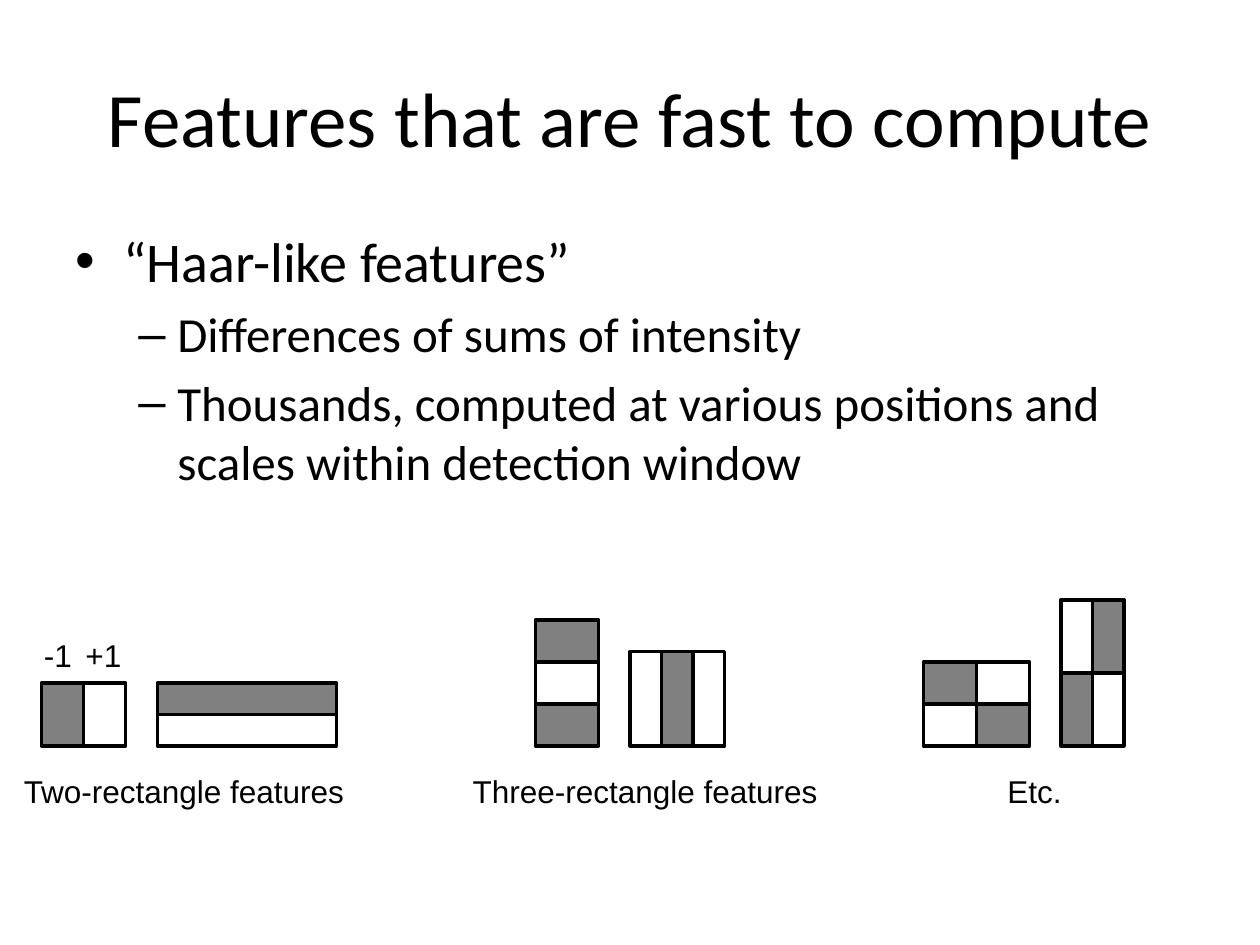
"""Build a slide on fast Haar-like image features."""
from pptx import Presentation
from pptx.dml.color import RGBColor
from pptx.enum.shapes import MSO_SHAPE as Shape
from pptx.enum.text import MSO_ANCHOR as Anchor, PP_ALIGN as Align
from pptx.oxml.xmlchemy import OxmlElement
from pptx.util import Inches, Pt

TITLE = "Features that are fast to compute"
POINTS = [
    (0, "“Haar-like features”"),
    (1, "Differences of sums of intensity"),
    (1, "Thousands, computed at various positions and scales within detection window"),
]
LEVELS = [("•", 32, 0.38, 0.38), ("–", 28, 0.81, 0.31)]
BASE = 5.92
GRIDS = [
    (0.33, 1 / 3, 0.5, ["#."]),
    (1.25, 1.42, 0.25, ["#", "."]),
    (4.25, 0.5, 1 / 3, ["#", ".", "#"]),
    (5, 0.25, 0.75, [".#."]),
    (7.33, 0.42, 1 / 3, ["#.", ".#"]),
    (8.42, 0.25, 0.58, [".#", "#."]),
]
FILLS = {"#": "808080", ".": "FFFFFF"}
CAPTIONS = [
    (0, 2.92, "Two-rectangle features"),
    (3.58, 3.08, "Three-rectangle features"),
    (6.75, 2.92, "Etc."),
]
SIGNS = [(0.25, 0.43, "-1"), (0.58, 0.49, "+1")]


def color(code):
    return RGBColor.from_string(code)


def style(para, size, face, align=Align.LEFT):
    font = para.font
    font.size, font.name = Pt(size), face
    font.color.rgb = color("000000")
    para.alignment = align


def box(slide, *area):
    frame = slide.shapes.add_textbox(*map(Inches, area)).text_frame
    frame.word_wrap = True
    return frame


def label(slide, left, top, width, text, align, wrap):
    frame = box(slide, left, top, width, 0.4)
    frame.word_wrap = wrap
    frame.text = text
    style(frame.paragraphs[0], 18, "Arial", align)


def bullet(para, level):
    mark, size, left, hang = LEVELS[level]
    para.level = level
    style(para, size, "Calibri")
    para.space_before = Pt(size * 0.2)
    props = para._p.get_or_add_pPr()
    props.set("marL", str(Inches(left)))
    props.set("indent", str(-Inches(hang)))
    for tag, key, value in [("a:buFont", "typeface", "Arial"), ("a:buChar", "char", mark)]:
        node = OxmlElement(tag)
        node.set(key, value)
        props.append(node)


def grid(slide, left, wide, high, rows):
    top = BASE - high * len(rows)
    for r, row in enumerate(rows):
        for c, key in enumerate(row):
            area = left + c * wide, top + r * high, wide, high
            cell = slide.shapes.add_shape(Shape.RECTANGLE, *map(Inches, area))
            cell.shadow.inherit = False
            cell.fill.solid()
            cell.fill.fore_color.rgb = color(FILLS[key])
            cell.line.color.rgb = color("000000")
            cell.line.width = Pt(2)


def main():
    deck = Presentation()
    deck.slide_width, deck.slide_height = Inches(10), Inches(7.5)
    slide = deck.slides.add_slide(deck.slide_layouts[5])

    title = slide.shapes.title
    title.left, title.top, title.width, title.height = map(Inches, (0.5, 0.3, 9, 1.25))
    title.text = TITLE
    title.text_frame.vertical_anchor = Anchor.MIDDLE
    style(title.text_frame.paragraphs[0], 44, "Calibri", Align.CENTER)

    body = box(slide, 0.5, 1.75, 9, 4.95)
    body.text = "\n".join(text for _, text in POINTS)
    for para, (level, _) in zip(body.paragraphs, POINTS):
        bullet(para, level)

    for item in GRIDS:
        grid(slide, *item)
    for left, width, text in CAPTIONS:
        label(slide, left, 6.08, width, text, Align.CENTER, True)
    for left, width, text in SIGNS:
        label(slide, left, 5, width, text, Align.LEFT, False)
    deck.save("out.pptx")


if __name__ == "__main__":
    main()
